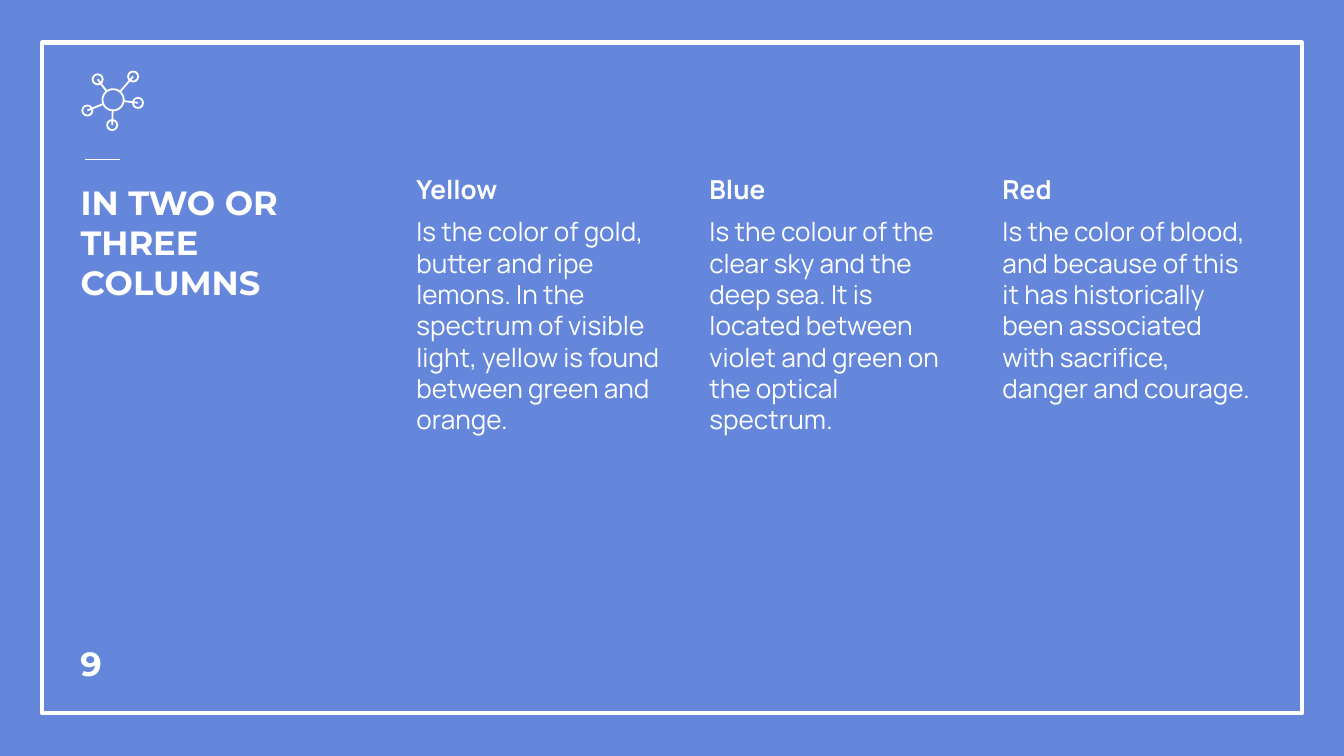
from math import hypot

from lxml import etree
from pptx import Presentation
from pptx.dml.color import RGBColor
from pptx.enum.shapes import MSO_CONNECTOR, MSO_SHAPE
from pptx.enum.text import MSO_ANCHOR, MSO_AUTO_SIZE, PP_ALIGN
from pptx.oxml.ns import qn
from pptx.util import Pt

STRAIGHT = MSO_CONNECTOR.STRAIGHT
RECTANGLE, OVAL = MSO_SHAPE.RECTANGLE, MSO_SHAPE.OVAL
TOP, BOTTOM = MSO_ANCHOR.TOP, MSO_ANCHOR.BOTTOM

# Content
TITLE = "IN TWO OR THREE COLUMNS"
PAGE_NUMBER = "9"
COLUMNS = [
    ("Yellow", "Is the color of gold, butter and ripe lemons. In the spectrum of "
               "visible light, yellow is found between green and orange."),
    ("Blue", "Is the colour of the clear sky and the deep sea. It is located between "
             "violet and green on the optical spectrum."),
    ("Red", "Is the color of blood, and because of this it has historically been "
            "associated with sacrifice, danger and courage."),
]

# Look and layout, in points
BLUE, WHITE = "6486DB", "FFFFFF"
HEADING_FONT, BODY_FONT = "Montserrat", "Manrope"
COLUMN_LEFT, COLUMN_STEP, COLUMN_WIDTH = 216, 157, 149
ICON_LINE = 0.96
HUB, HUB_RADIUS = (60.6, 53.5), 5.7
NODES = [(71.3, 41), (52.3, 42.5), (46.8, 59.2), (60.1, 67), (73.9, 55.1)]
NODE_RADIUS = 2.7


def color(value):
    return RGBColor.from_string(value)


def add_outline(page, kind, left, top, width, height, weight):
    shape = page.shapes.add_shape(kind, Pt(left), Pt(top), Pt(width), Pt(height))
    shape.shadow.inherit = False
    shape.fill.background()
    shape.line.color.rgb = color(WHITE)
    shape.line.width = Pt(weight)


def add_circle(page, center, radius):
    x, y = center
    add_outline(page, OVAL, x - radius, y - radius, 2 * radius, 2 * radius, ICON_LINE)


def add_line(page, start, end, weight):
    line = page.shapes.add_connector(STRAIGHT, *(Pt(v) for v in (*start, *end)))
    line.line.color.rgb = color(WHITE)
    line.line.width = Pt(weight)
    etree.SubElement(line._element.spPr, qn("a:effectLst"))


def fill_box(box, area, texts, font, size, bolds, anchor=TOP):
    box.left, box.top, box.width, box.height = (Pt(v) for v in area)
    frame = box.text_frame
    frame.word_wrap = True
    frame.auto_size = MSO_AUTO_SIZE.NONE
    frame.vertical_anchor = anchor
    frame.margin_left = frame.margin_right = Pt(7.2)
    frame.margin_top = frame.margin_bottom = Pt(7.2)
    for index, (text, bold) in enumerate(zip(texts, bolds)):
        para = frame.add_paragraph() if index else frame.paragraphs[0]
        para.text = text
        para.alignment = PP_ALIGN.LEFT
        para.space_before = Pt(6 if index else 0)
        para.font.name = font
        para.font.size = Pt(size)
        para.font.bold = bold
        para.font.color.rgb = color(WHITE)


def add_text(page, area, *style):
    box = page.shapes.add_textbox(*(Pt(v) for v in area))
    fill_box(box, area, *style)


def main():
    deck = Presentation()
    deck.slide_width, deck.slide_height = Pt(720), Pt(405)
    page = deck.slides.add_slide(deck.slide_layouts[5])
    page.background.fill.solid()
    page.background.fill.fore_color.rgb = color(BLUE)

    # Frame and short rule above the title
    add_outline(page, RECTANGLE, 22.5, 22.75, 675, 359.5, 2.25)
    add_line(page, (45.5, 85.5), (64.25, 85.5), 0.75)

    # Title, columns and page number
    fill_box(page.shapes.title, (36, 90, 170, 64), [TITLE], HEADING_FONT, 18, [True])
    for index, texts in enumerate(COLUMNS):
        area = (COLUMN_LEFT + index * COLUMN_STEP, 85.5, COLUMN_WIDTH, 302.5)
        add_text(page, area, texts, BODY_FONT, 14, [True, False])
    add_text(page, (36, 330, 43, 43), [PAGE_NUMBER], HEADING_FONT, 18, [True], BOTTOM)

    # Network icon: each spoke runs from a node's centre to the hub's edge
    add_circle(page, HUB, HUB_RADIUS)
    for node in NODES:
        add_circle(page, node, NODE_RADIUS)
        dx, dy = node[0] - HUB[0], node[1] - HUB[1]
        share = HUB_RADIUS / hypot(dx, dy)
        add_line(page, node, (HUB[0] + dx * share, HUB[1] + dy * share), ICON_LINE)

    deck.save("out.pptx")


if __name__ == "__main__":
    main()
